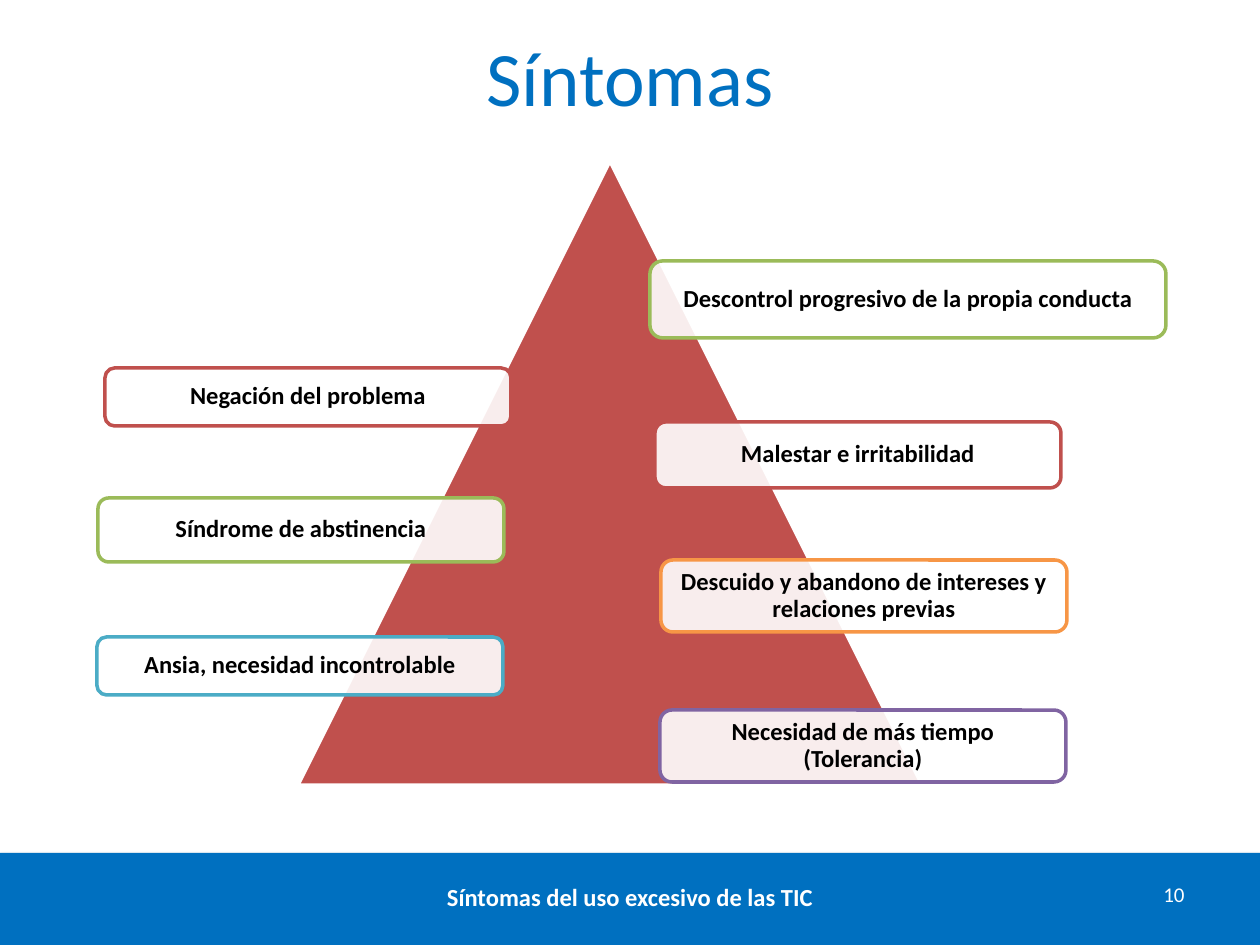
from lxml import etree
from pptx import Presentation
from pptx.dml.color import RGBColor
from pptx.enum.shapes import MSO_SHAPE as Geo
from pptx.enum.text import MSO_ANCHOR as Anchor, PP_ALIGN as Align
from pptx.oxml import parse_xml
from pptx.oxml.ns import nsdecls, qn
from pptx.util import Emu, Pt

SCALE = 914400 / 126
FONT = "Calibri"
BLUE, RED, GREEN = "0070C0", "C0504D", "9BBB59"
PURPLE, AQUA, ORANGE = "8064A2", "4BACC6", "F79646"
WHITE, BLACK = "FFFFFF", "000000"

# left, top, width, height, outline, text
SIGNS = [
    (105, 368, 406, 58, RED, "Negación del problema"),
    (98, 498, 406, 64, GREEN, "Síndrome de abstinencia"),
    (660, 710, 406, 72, PURPLE, "Necesidad de más tiempo (Tolerancia)"),
    (97, 637, 406, 58, AQUA, "Ansia, necesidad incontrolable"),
    (661, 560, 406, 72, ORANGE,
     "Descuido y abandono de intereses y relaciones previas"),
    (655, 422, 406, 66, RED, "Malestar e irritabilidad"),
    (650, 261, 516, 77, GREEN, "Descontrol progresivo de la propia conducta"),
]


def px(n):
    return Emu(round(n * SCALE))


def color(code):
    return RGBColor.from_string(code)


class Deck:
    """Holds the style and the current slide."""

    def __init__(self, wide, high):
        self.prs = Presentation()
        self.prs.slide_width, self.prs.slide_height = px(wide), px(high)
        self.slide = self.prs.slides.add_slide(self.prs.slide_layouts[6])

    def shape(self, geo, box, fill, line=None):
        item = self.slide.shapes.add_shape(geo, *map(px, box))
        item.shadow.inherit = False
        item.fill.solid()
        item.fill.fore_color.rgb = color(fill)
        if line:
            item.line.color.rgb = color(line)
            item.line.width = Pt(2)
        else:
            item.line.fill.background()
        return item

    def bar(self, box, fill):
        """Add a flat band with a soft shadow."""
        props = self.shape(Geo.RECTANGLE, box, fill)._element.spPr
        props.find(qn("a:effectLst")).append(parse_xml(
            f'<a:outerShdw {nsdecls("a")} blurRad="{Pt(3.1)}" '
            f'dist="{Pt(1.8)}" dir="5400000" rotWithShape="0">'
            '<a:srgbClr val="000000"><a:alpha val="35000"/></a:srgbClr>'
            '</a:outerShdw>'))

    def put(self, frame, text, size, ink, bold=False, align=Align.CENTER):
        """Set the text of a frame and return its paragraph."""
        frame.word_wrap = True
        para = frame.paragraphs[0]
        para.text = text
        para.alignment = align
        font = para.font
        font.name, font.size, font.bold = FONT, Pt(size), bold
        font.color.rgb = color(ink)
        return para

    def label(self, box, text, size, ink, inset=6, **style):
        frame = self.slide.shapes.add_textbox(*map(px, box)).text_frame
        frame.margin_top = px(inset)
        frame.vertical_anchor = Anchor.TOP
        self.put(frame, text, size, ink, **style)

    def sign(self, box, line, text):
        """Add a rounded, slightly see-through box with bold text."""
        item = self.shape(Geo.ROUNDED_RECTANGLE, box, WHITE, line)
        tint = item._element.spPr.find(qn("a:solidFill"))[0]
        etree.SubElement(tint, qn("a:alpha")).set("val", "90000")
        frame = item.text_frame
        frame.margin_left = frame.margin_right = px(9)
        frame.margin_top = frame.margin_bottom = px(8)
        frame.vertical_anchor = Anchor.MIDDLE
        self.put(frame, text, 14, BLACK, bold=True).line_spacing = 0.9


def main():
    deck = Deck(1260, 945)
    deck.bar((0, 853, 1260, 96), BLUE)
    deck.label((63, 18, 1134, 158), "Síntomas", 44, BLUE, inset=11)
    deck.label((1047, 876, 150, 50), "10", 12, WHITE, align=Align.RIGHT)
    deck.label((243, 876, 774, 50), "Síntomas del uso excesivo de las TIC",
               14, WHITE, bold=True)
    deck.shape(Geo.ISOSCELES_TRIANGLE, (298, 161, 624, 624), RED, WHITE)
    for *box, line, text in SIGNS:
        deck.sign(box, line, text)
    deck.prs.save("out.pptx")


if __name__ == "__main__":
    main()
